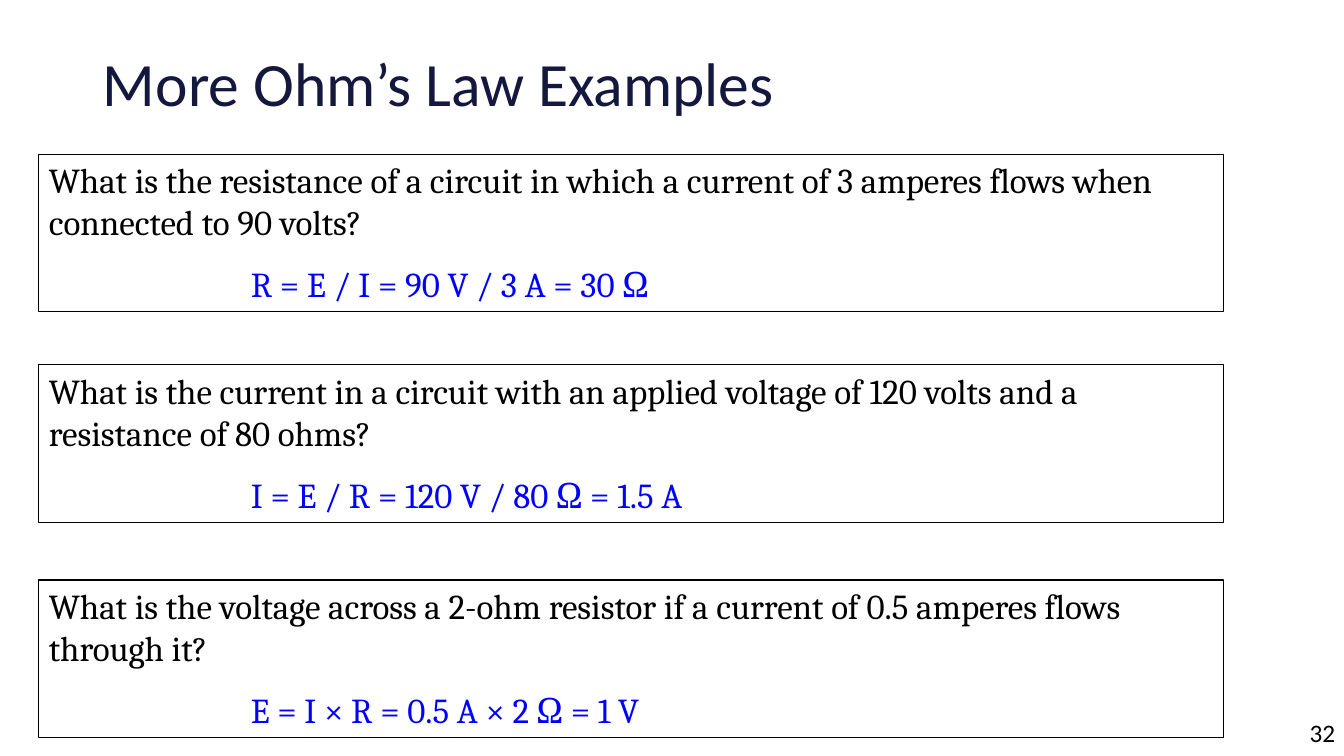
from pptx import Presentation
from pptx.dml.color import RGBColor
from pptx.enum.shapes import MSO_SHAPE
from pptx.enum.text import MSO_ANCHOR, PP_ALIGN
from pptx.util import Emu, Pt

EMU_PER_PX = 914400 / 100.8
ANSWER_INDENT = 202


def px(length):
    return Emu(round(length * EMU_PER_PX))


def write(paragraph, text, name, size, color, **formats):
    for attribute, value in formats.items():
        setattr(paragraph, attribute, value)
    run = paragraph.add_run()
    run.text = text
    for attribute, value in {"name": name, "size": Pt(size)}.items():
        setattr(run.font, attribute, value)
    run.font.color.rgb = RGBColor.from_string(color)


presentation = Presentation()
presentation.slide_width = px(1344)
presentation.slide_height = px(756)
slide = presentation.slides.add_slide(presentation.slide_layouts[6])

labels = [
    ((93, 21, 1159, 132), "More Ohm’s Law Examples", 44, "14183F", MSO_ANCHOR.MIDDLE,
     {"alignment": PP_ALIGN.LEFT, "line_spacing": 0.9}),
    ((1276, 712, 69, 40), "32", 18, "000000", MSO_ANCHOR.TOP,
     {"alignment": PP_ALIGN.RIGHT}),
]
for bounds, text, size, color, anchor, formats in labels:
    frame = slide.shapes.add_textbox(*map(px, bounds)).text_frame
    frame.word_wrap = True
    frame.vertical_anchor = anchor
    write(frame.paragraphs[0], text, "Calibri", size, color, **formats)

examples = [
    (154, "What is the resistance of a circuit in which a current of 3 amperes flows "
          "when connected to 90 volts?", "R = E / I = 90 V / 3 A = 30 Ω"),
    (365, "What is the current in a circuit with an applied voltage of 120 volts and a "
          "resistance of 80 ohms?", "I = E / R = 120 V / 80 Ω = 1.5 A"),
    (580, "What is the voltage across a 2-ohm resistor if a current of 0.5 amperes flows "
          "through it?", "E = I × R = 0.5 A × 2 Ω = 1 V"),
]
for top, question, answer in examples:
    shape = slide.shapes.add_shape(MSO_SHAPE.RECTANGLE, px(39), px(top), px(1185), px(158))
    shape.shadow.inherit = False
    shape.fill.background()
    shape.line.color.rgb = RGBColor.from_string("000000")
    shape.line.width = Pt(0.75)
    frame = shape.text_frame
    frame.word_wrap = True
    frame.vertical_anchor = MSO_ANCHOR.TOP
    write(frame.paragraphs[0], question, "Cambria", 25, "000000", alignment=PP_ALIGN.LEFT)
    paragraph = frame.add_paragraph()
    paragraph._p.get_or_add_pPr().set("marL", str(px(ANSWER_INDENT)))
    write(paragraph, answer, "Cambria", 25, "0000FF",
          alignment=PP_ALIGN.LEFT, space_before=Pt(14))

presentation.save("out.pptx")
